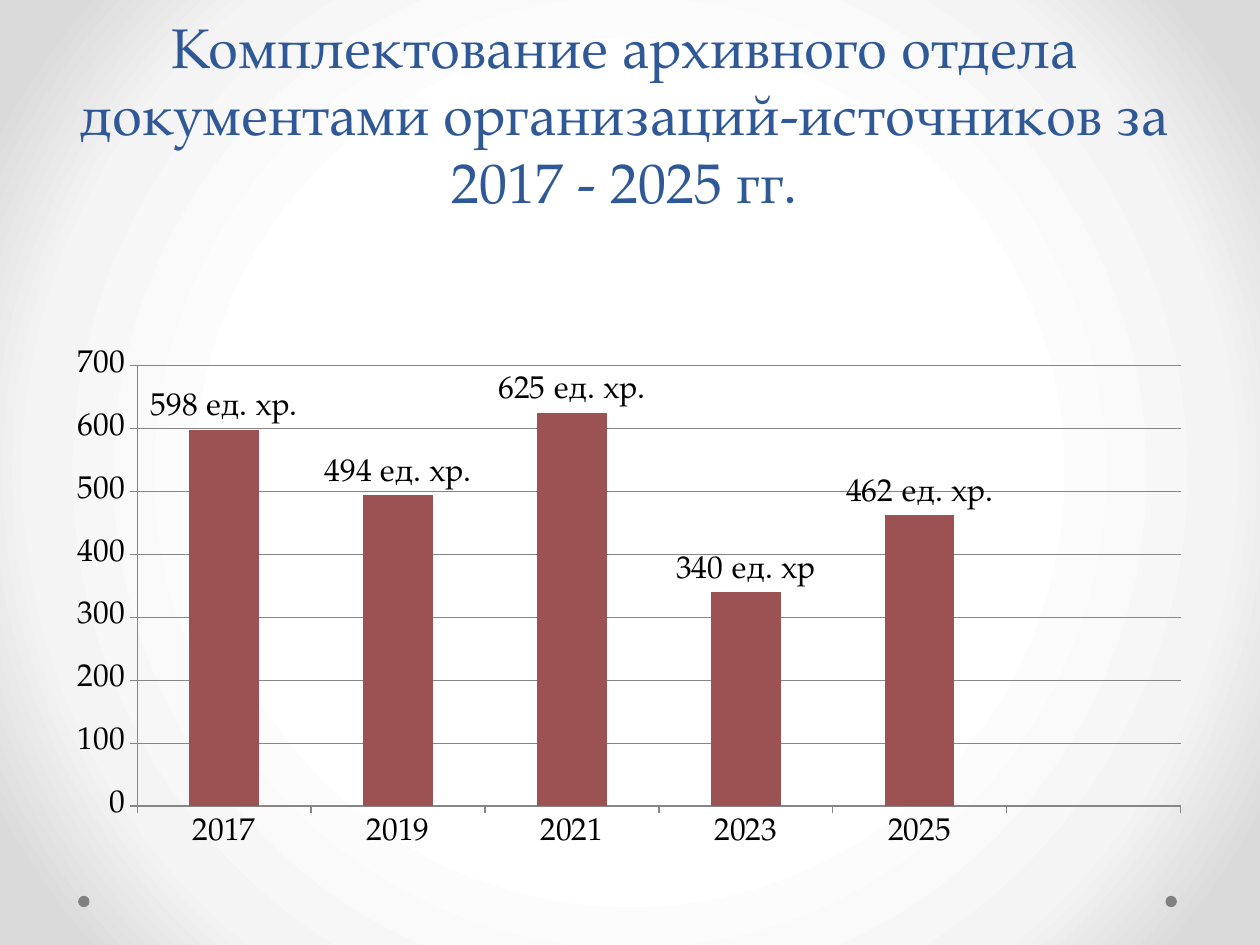
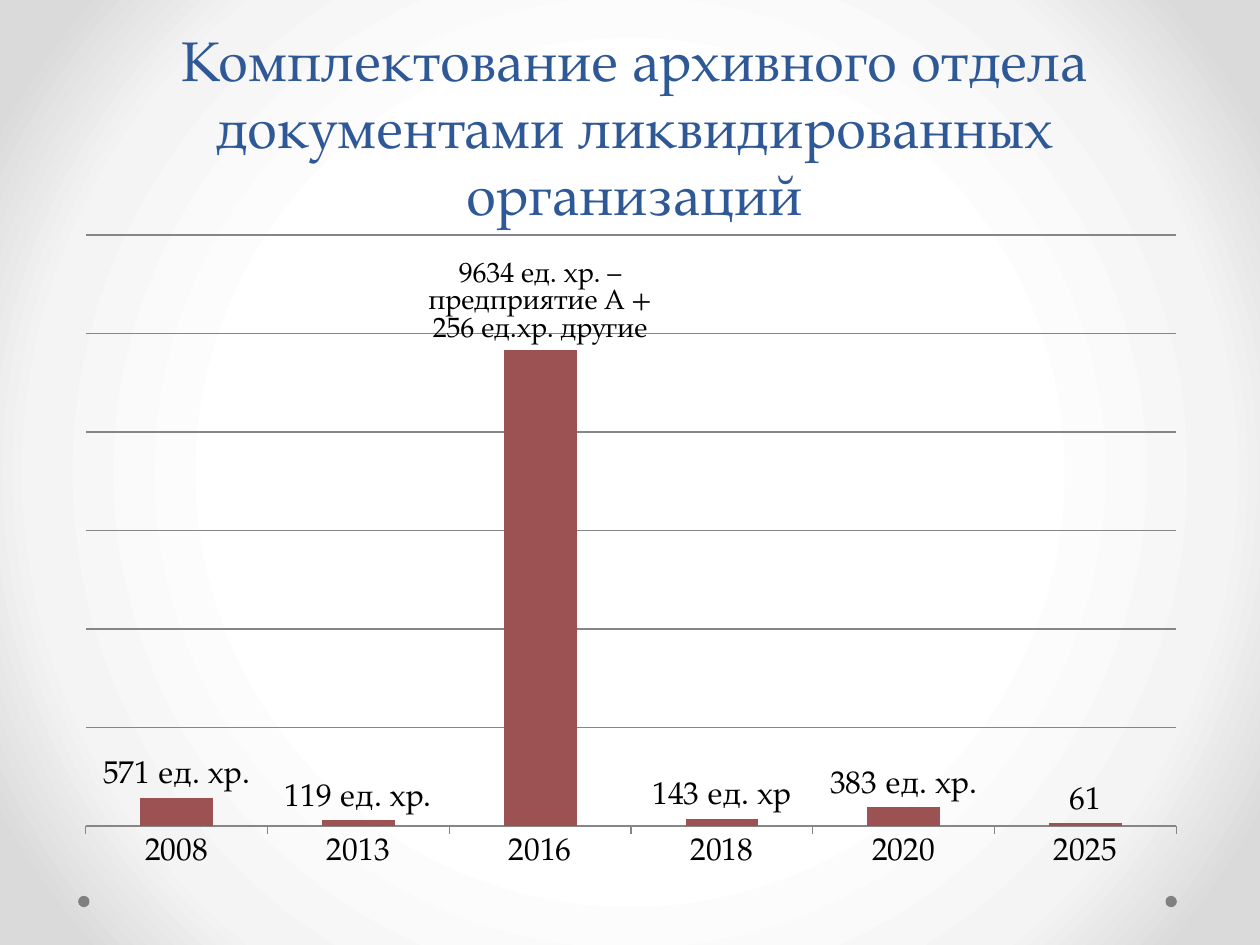
from dataclasses import dataclass
from typing import Optional

from lxml import etree
from pptx import Presentation
from pptx.chart.data import CategoryChartData
from pptx.dml.color import RGBColor
from pptx.enum.chart import XL_CHART_TYPE, XL_LABEL_POSITION, XL_TICK_MARK
from pptx.enum.shapes import MSO_SHAPE
from pptx.enum.text import MSO_ANCHOR, PP_ALIGN
from pptx.oxml.ns import qn
from pptx.util import Inches, Pt

FONT = "TeX Gyre Pagella"
TITLE_BLUE = RGBColor(0x2F, 0x58, 0x97)
BAR_RED = RGBColor(0x9C, 0x52, 0x52)
AXIS_GREY = RGBColor(0x86, 0x86, 0x86)
DOT_GREY = RGBColor(0x80, 0x80, 0x80)
BLACK = RGBColor(0, 0, 0)
WHITE = RGBColor(0xFF, 0xFF, 0xFF)
BACKGROUND_STOPS = (
    (50, WHITE),
    (76, RGBColor(0xF4, 0xF4, 0xF4)),
    (92, RGBColor(0xDA, 0xDA, 0xDA)),
)

COLUMNS = XL_CHART_TYPE.COLUMN_CLUSTERED
ABOVE_BAR = XL_LABEL_POSITION.OUTSIDE_END
TICK_OUT, TICK_NONE = XL_TICK_MARK.OUTSIDE, XL_TICK_MARK.NONE
OVAL = MSO_SHAPE.OVAL
BOTTOM, CENTER = MSO_ANCHOR.BOTTOM, PP_ALIGN.CENTER

DOT_LEFTS, DOT_TOP, DOT_SIZE = (0.62, 9.25), 7.11, 0.09


@dataclass(frozen=True)
class Box:
    left: float
    top: float
    width: float
    height: float

    def inches(self) -> tuple:
        return tuple(Inches(v) for v in (self.left, self.top, self.width, self.height))


@dataclass(frozen=True)
class Bar:
    year: str
    units: Optional[int] = None
    label: str = ""
    label_size: int = 18


@dataclass(frozen=True)
class ChartSlide:
    title: str
    title_box: Box
    chart_box: Box
    plot_area: Box  # fractions of the chart box
    bars: tuple[Bar, ...]
    axis_max: int
    axis_step: int
    axis_visible: bool


SLIDES = (
    ChartSlide(
        "Комплектование архивного отдела документами организаций-источников за 2017 - 2025 гг.",
        Box(0.51, 0.21, 8.9, 1.54),
        Box(0.43, 2.41, 9.16, 4.84),
        Box(0.072, 0.102, 0.904, 0.722),
        (
            Bar("2017", 598, "598 ед. хр."),
            Bar("2019", 494, "494 ед. хр."),
            Bar("2021", 625, "625 ед. хр."),
            Bar("2023", 340, "340 ед. хр"),
            Bar("2025", 462, "462 ед. хр."),
            Bar(""),
        ),
        axis_max=700, axis_step=100, axis_visible=True,
    ),
    ChartSlide(
        "Комплектование архивного отдела документами ликвидированных организаций",
        Box(0.51, 0.21, 9.06, 1.64),
        Box(0.51, 1.86, 8.98, 5.35),
        Box(0.019, 0, 0.964, 0.878),
        (
            Bar("2008", 571, "571 ед. хр."),
            Bar("2013", 119, "119 ед. хр."),
            Bar("2016", 9659, "9634 ед. хр. – предприятие А + 256 ед.хр. другие", 16),
            Bar("2018", 143, "143 ед. хр"),
            Bar("2020", 383, "383 ед. хр."),
            Bar("2025", 61),
        ),
        axis_max=12000, axis_step=2000, axis_visible=False,
    ),
)


def set_background(master) -> None:
    """Radial gradient shared by every slide."""
    master.background.fill.gradient()
    gradient = next(master.element.iter(qn("a:gradFill")))
    for child in list(gradient):
        gradient.remove(child)
    stops = etree.SubElement(gradient, qn("a:gsLst"))
    for percent, color in BACKGROUND_STOPS:
        stop = etree.SubElement(stops, qn("a:gs"), pos=str(percent * 1000))
        etree.SubElement(stop, qn("a:srgbClr"), val=str(color))
    circle = etree.SubElement(gradient, qn("a:path"), path="circle")
    etree.SubElement(circle, qn("a:fillToRect"), dict.fromkeys("ltrb", "50000"))


def add_dots(slide) -> None:
    for left in DOT_LEFTS:
        dot = slide.shapes.add_shape(OVAL, *Box(left, DOT_TOP, DOT_SIZE, DOT_SIZE).inches())
        dot.shadow.inherit = False
        dot.fill.solid()
        dot.fill.fore_color.rgb = DOT_GREY
        dot.line.fill.background()


def add_title(slide, text: str, box: Box) -> None:
    frame = slide.shapes.add_textbox(*box.inches()).text_frame
    frame.word_wrap = True
    frame.vertical_anchor = BOTTOM
    title = frame.paragraphs[0]
    title.text = text
    title.alignment = CENTER
    title.line_spacing = Pt(38.4)
    style_font(title.font, 32, TITLE_BLUE)


def style_font(font, size: int, color: RGBColor) -> None:
    font.name = FONT
    font.size = Pt(size)
    font.color.rgb = color


def style_line(line) -> None:
    line.color.rgb = AXIS_GREY
    line.width = Pt(0.75)


def set_plot_area(chart, area: Box) -> None:
    plot_area = next(chart.element.iter(qn("c:plotArea")))
    for old in plot_area.findall(qn("c:layout")):
        plot_area.remove(old)
    layout = etree.Element(qn("c:layout"))
    plot_area.insert(0, layout)
    manual = etree.SubElement(layout, qn("c:manualLayout"))
    settings = (
        ("layoutTarget", "inner"), ("xMode", "edge"), ("yMode", "edge"),
        ("x", area.left), ("y", area.top), ("w", area.width), ("h", area.height),
    )
    for tag, value in settings:
        etree.SubElement(manual, qn(f"c:{tag}"), val=str(value))


def label_bars(series, bars: tuple[Bar, ...]) -> None:
    labels = series.data_labels
    labels.show_value = True
    labels.position = ABOVE_BAR
    style_font(labels.font, 18, BLACK)
    for index, bar in enumerate(bars):
        if bar.label:
            label = series.points[index].data_label
            text = label.text_frame.paragraphs[0]
            text.text = bar.label
            style_font(text.font, bar.label_size, BLACK)
            label.position = ABOVE_BAR


def add_bar_chart(slide, content: ChartSlide) -> None:
    data = CategoryChartData()
    data.categories = [bar.year for bar in content.bars]
    data.add_series("Series 1", [bar.units for bar in content.bars])
    chart = slide.shapes.add_chart(COLUMNS, *content.chart_box.inches(), data).chart
    chart.has_legend = False
    chart.has_title = False
    style_font(chart.font, 18, BLACK)
    set_plot_area(chart, content.plot_area)

    # Axes
    years, units = chart.category_axis, chart.value_axis
    for axis in (years, units):
        axis.major_tick_mark = TICK_OUT
        axis.minor_tick_mark = TICK_NONE
        style_line(axis.format.line)
    units.minimum_scale = 0
    units.maximum_scale = content.axis_max
    units.major_unit = content.axis_step
    units.visible = content.axis_visible
    units.has_major_gridlines = True
    style_line(units.major_gridlines.format.line)

    # Bars
    plot = chart.plots[0]
    plot.gap_width = 150
    plot.vary_by_categories = False
    series = plot.series[0]
    series.format.fill.solid()
    series.format.fill.fore_color.rgb = BAR_RED
    label_bars(series, content.bars)


def main() -> None:
    prs = Presentation()
    prs.slide_width, prs.slide_height = Inches(10), Inches(7.5)
    set_background(prs.slide_master)
    for content in SLIDES:
        slide = prs.slides.add_slide(prs.slide_layouts[6])
        add_dots(slide)
        add_title(slide, content.title, content.title_box)
        add_bar_chart(slide, content)
    prs.save("out.pptx")


if __name__ == "__main__":
    main()
